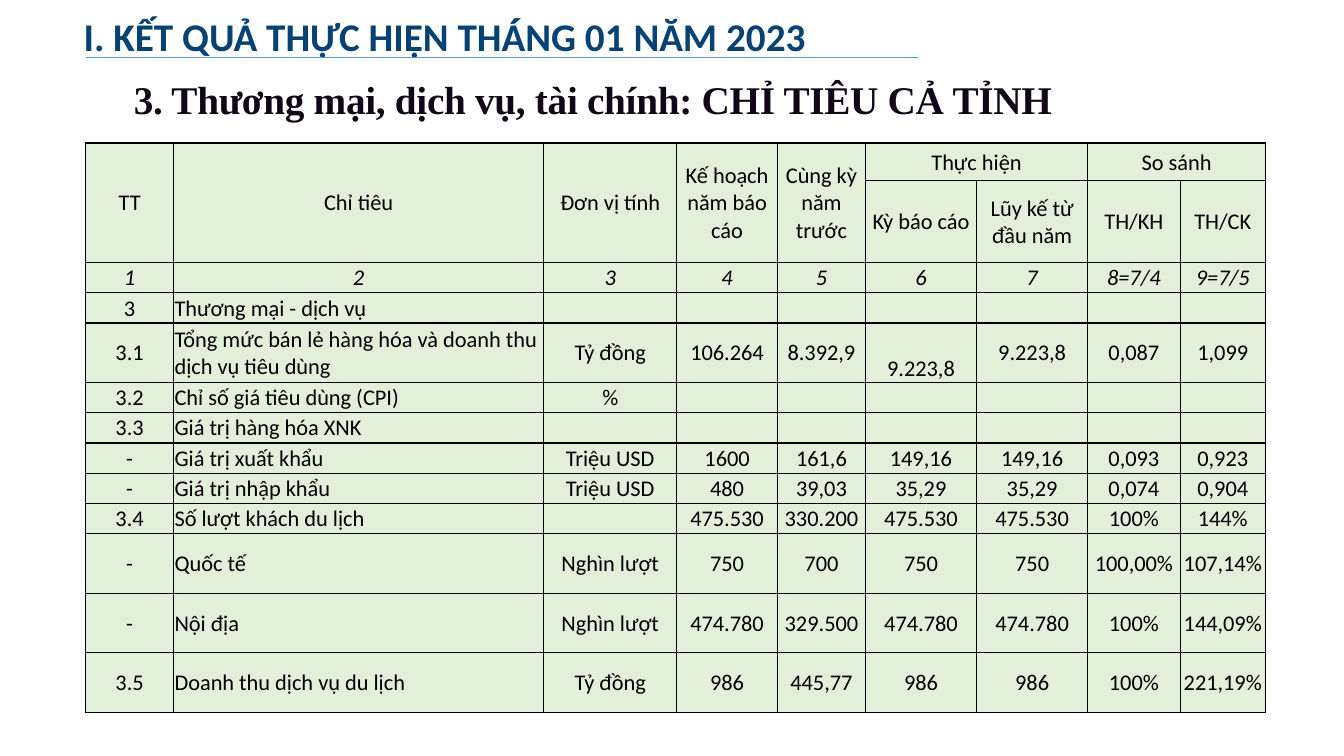
from dataclasses import dataclass

from lxml import etree
from pptx import Presentation
from pptx import util as u
from pptx.dml import color
from pptx.enum import shapes, text
from pptx.oxml import ns


@dataclass(frozen=True)
class Theme:
    heading: str = "064273"
    subheading: str = "100717"
    rule: str = "5B9BD5"
    ink: str = "000000"
    cell: str = "E2F0D9"
    sans: str = "Calibri"
    serif: str = "Times New Roman"
    heading_size: float = 28
    table_size: float = 16
    line_width: float = 1
    cell_margin: float = 0.72


@dataclass(frozen=True)
class Style:
    font: str
    size: float
    colour: str
    bold: bool = False
    italic: bool = False


@dataclass(frozen=True)
class Row:
    height: float
    values: tuple[str, ...]
    italic: bool = False


@dataclass(frozen=True)
class Merge:
    top: int
    left: int
    bottom: int
    right: int


THEME = Theme()
SHORT, TALL = 21.6, 42.5
NAME_COLUMN = 1
FIRST_DATA_ROW = 3
LOWERED_CELL = (4, 5)
COLUMN_WIDTHS = (62.8, 264.4, 95, 72, 62.8, 79.4, 79.4, 66, 61)
ROWS = (
    Row(27, ("TT", "Chỉ tiêu", "Đơn vị tính", "Kế hoạch năm báo cáo",
             "Cùng kỳ năm trước", "Thực hiện", "", "So sánh", "")),
    Row(58, ("", "", "", "", "", "Kỳ báo cáo", "Lũy kế từ đầu năm", "TH/KH", "TH/CK")),
    Row(SHORT, ("1", "2", "3", "4", "5", "6", "7", "8=7/4", "9=7/5"), italic=True),
    Row(SHORT, ("3", "Thương mại - dịch vụ", "", "", "", "", "", "", "")),
    Row(TALL, ("3.1", "Tổng mức bán lẻ hàng hóa và doanh thu dịch vụ tiêu dùng", "Tỷ đồng",
               "106.264", "8.392,9", "9.223,8", "9.223,8", "0,087", "1,099")),
    Row(SHORT, ("3.2", "Chỉ số giá tiêu dùng (CPI)", "%", "", "", "", "", "", "")),
    Row(SHORT, ("3.3", "Giá trị hàng hóa XNK", "", "", "", "", "", "", "")),
    Row(SHORT, ("-", "Giá trị xuất khẩu", "Triệu USD", "1600", "161,6",
                "149,16", "149,16", "0,093", "0,923")),
    Row(SHORT, ("-", "Giá trị nhập khẩu", "Triệu USD", "480", "39,03",
                "35,29", "35,29", "0,074", "0,904")),
    Row(SHORT, ("3.4", "Số lượt khách du lịch", "", "475.530", "330.200",
                "475.530", "475.530", "100%", "144%")),
    Row(TALL, ("-", "Quốc tế", "Nghìn lượt", "750", "700",
               "750", "750", "100,00%", "107,14%")),
    Row(TALL, ("-", "Nội địa", "Nghìn lượt", "474.780", "329.500",
               "474.780", "474.780", "100%", "144,09%")),
    Row(TALL, ("3.5", "Doanh thu dịch vụ du lịch", "Tỷ đồng", "986", "445,77",
               "986", "986", "100%", "221,19%")),
)
MERGES = tuple(Merge(0, column, 1, column) for column in range(5)) + (
    Merge(0, 5, 0, 6), Merge(0, 7, 0, 8))


def rgb(value: str) -> color.RGBColor:
    return color.RGBColor.from_string(value)


def add_span(para, wording: str, style: Style):
    span = para.add_run()
    span.text = wording
    span.font.name = style.font
    span.font.size = u.Pt(style.size)
    span.font.bold = style.bold
    span.font.italic = style.italic
    span.font.color.rgb = rgb(style.colour)
    return span


def add_title(page) -> None:
    title = page.shapes.title
    title.left, title.top = u.Pt(52.6), u.Pt(3.6)
    title.width, title.height = u.Pt(885.6), u.Pt(44.6)
    frame = title.text_frame
    frame.word_wrap = True
    frame.auto_size = text.MSO_AUTO_SIZE.NONE
    frame.vertical_anchor = text.MSO_ANCHOR.MIDDLE
    para = frame.paragraphs[0]
    para.alignment = text.PP_ALIGN.LEFT
    add_span(para, "I. KẾT QUẢ THỰC HIỆN THÁNG 01 NĂM 2023",
             Style(THEME.sans, THEME.heading_size, THEME.heading, bold=True))


def add_rule(page) -> None:
    rule = page.shapes.add_connector(
        shapes.MSO_CONNECTOR.STRAIGHT, u.Pt(61.2), u.Pt(41), u.Pt(656), u.Pt(41))
    rule.line.color.rgb = rgb(THEME.rule)
    rule.line.width = u.Pt(THEME.line_width)
    etree.SubElement(rule._element.spPr, ns.qn("a:effectLst"))


def add_subheading(page) -> None:
    box = page.shapes.add_textbox(u.Pt(87.8), u.Pt(50.4), u.Pt(678.2), u.Pt(41))
    frame = box.text_frame
    frame.word_wrap = False
    frame.auto_size = text.MSO_AUTO_SIZE.SHAPE_TO_FIT_TEXT
    para = frame.paragraphs[0]
    para.space_before = u.Pt(3)
    para._p.get_or_add_pPr().set("marL", str(u.Pt(0.72)))
    span = add_span(para, "3. Thương mại, dịch vụ, tài chính: CHỈ TIÊU CẢ TỈNH",
                    Style(THEME.serif, THEME.heading_size, THEME.subheading, bold=True))
    span._r.get_or_add_rPr().set("spc", "-20")


def add_borders(cell) -> None:
    properties = cell._tc.get_or_add_tcPr()
    for position, side in enumerate(("lnL", "lnR", "lnT", "lnB")):
        border = etree.Element(ns.qn(f"a:{side}"), w=str(u.Pt(THEME.line_width)))
        fill = etree.SubElement(border, ns.qn("a:solidFill"))
        etree.SubElement(fill, ns.qn("a:srgbClr"), val=THEME.ink)
        properties.insert(position, border)


def fill_cell(cell, wording: str, style: Style, align) -> None:
    cell.margin_left = cell.margin_right = cell.margin_top = u.Pt(THEME.cell_margin)
    cell.margin_bottom = 0
    cell.vertical_anchor = text.MSO_ANCHOR.MIDDLE
    cell.fill.solid()
    cell.fill.fore_color.rgb = rgb(THEME.cell)
    add_borders(cell)
    para = cell.text_frame.paragraphs[0]
    para.alignment = align
    if wording:
        add_span(para, wording, style)
    else:
        etree.SubElement(para._p, ns.qn("a:endParaRPr"), sz=str(u.Pt(style.size).centipoints))


def add_indicator_table(page) -> None:
    frame = page.shapes.add_table(
        len(ROWS), len(COLUMN_WIDTHS), u.Pt(61.2), u.Pt(102.2),
        u.Pt(sum(COLUMN_WIDTHS)), u.Pt(sum(row.height for row in ROWS)))
    table = frame.table
    table.first_row = table.horz_banding = False
    for column, width in zip(table.columns, COLUMN_WIDTHS):
        column.width = u.Pt(width)
    for r, row in enumerate(ROWS):
        table.rows[r].height = u.Pt(row.height)
        style = Style(THEME.sans, THEME.table_size, THEME.ink, italic=row.italic)
        for c, wording in enumerate(row.values):
            is_name = c == NAME_COLUMN and r >= FIRST_DATA_ROW
            align = text.PP_ALIGN.LEFT if is_name else text.PP_ALIGN.CENTER
            fill_cell(table.cell(r, c), wording, style, align)
    for merge in MERGES:
        table.cell(merge.top, merge.left).merge(table.cell(merge.bottom, merge.right))
    lowered = table.cell(*LOWERED_CELL)
    lowered.vertical_anchor = text.MSO_ANCHOR.BOTTOM
    lowered.text_frame.paragraphs[0].space_after = u.Pt(12)


def main() -> None:
    deck = Presentation()
    deck.slide_width, deck.slide_height = u.Pt(960), u.Pt(540)
    page = deck.slides.add_slide(deck.slide_layouts.get_by_name("Title Only"))
    add_title(page)
    add_rule(page)
    add_subheading(page)
    add_indicator_table(page)
    deck.save("out.pptx")


if __name__ == "__main__":
    main()
